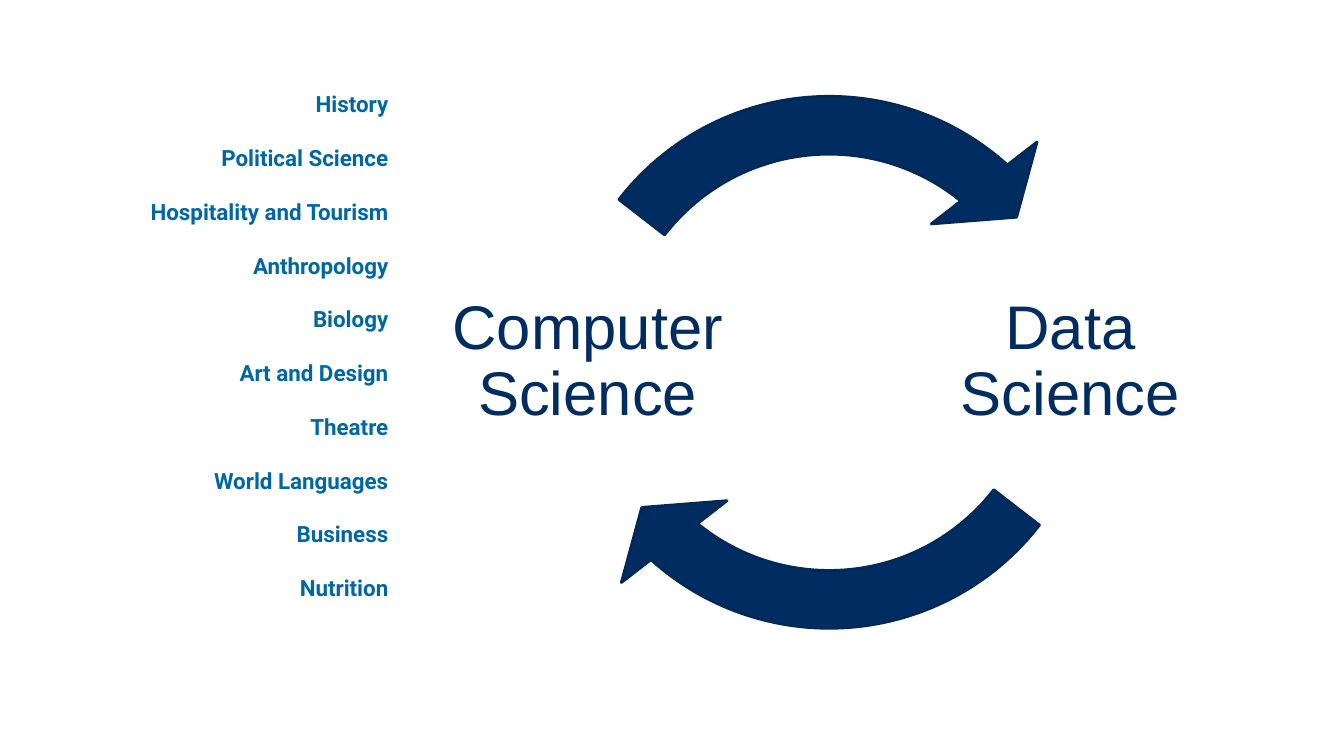
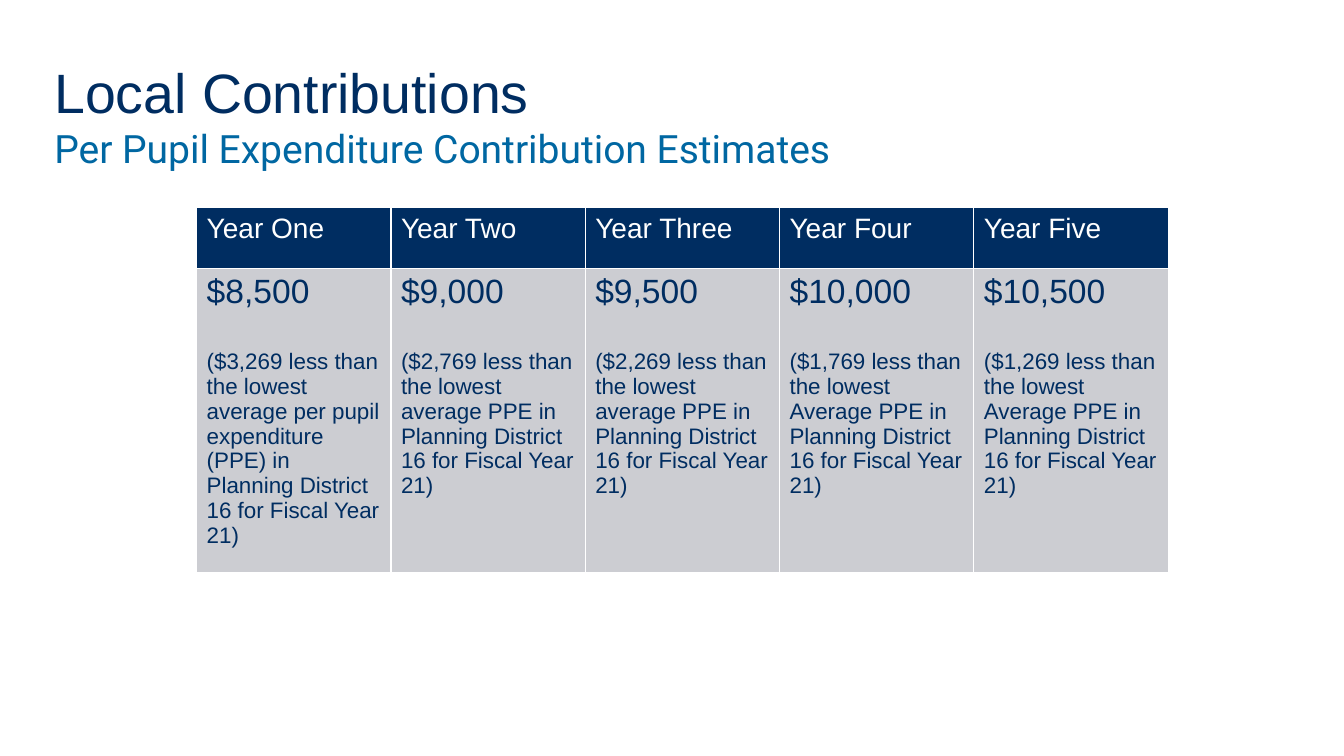
from dataclasses import dataclass
from typing import Any, NamedTuple

from lxml.etree import SubElement as Sub
from pptx import Presentation
from pptx.dml.color import RGBColor as Rgb
from pptx.enum.shapes import MSO_SHAPE as Kind
from pptx.enum.text import MSO_ANCHOR as Anchor, PP_ALIGN as Align
from pptx.oxml.ns import qn
from pptx.util import Inches, Pt

WIDE, HIGH = Inches(13.333), Inches(7.5)
INK = {"navy": "002D61", "edge": "002958", "blue": "0067A2",
       "gray": "CCCDD2", "white": "FFFFFF"}


class Box(NamedTuple):
    """Left, top, width and height in percent of the slide."""
    x: float
    y: float
    w: float
    h: float

    def emu(self) -> tuple[int, ...]:
        sides = (WIDE, HIGH, WIDE, HIGH)
        return tuple(round(side * part / 100) for side, part in zip(sides, self))


@dataclass(frozen=True)
class Style:
    size: float
    ink: str = "navy"
    name: str = "Arial"
    bold: bool = False


class Line(NamedTuple):
    text: str
    style: Style
    gap: float = 0


class Year(NamedTuple):
    head: str
    cost: str
    less: str
    base: str = "average PPE"


TITLE = Style(39.6)
SUB = Style(27.9, "blue", "Roboto")
FIELD = Style(16, "blue", "Roboto", True)
TOPIC = Style(44)
HEAD = Style(20, "white")
COST = Style(24)
NOTE = Style(16)

FIELDS = ("History", "Political Science", "Hospitality and Tourism",
          "Anthropology", "Biology", "Art and Design", "Theatre",
          "World Languages", "Business", "Nutrition")
YEARS = (
    Year("Year One", "$8,500", "$3,269", "average per pupil expenditure (PPE)"),
    Year("Year Two", "$9,000", "$2,769"),
    Year("Year Three", "$9,500", "$2,269"),
    Year("Year Four", "$10,000", "$1,769", "Average PPE"),
    Year("Year Five", "$10,500", "$1,269", "Average PPE"),
)


def tint(name: str) -> Rgb:
    return Rgb.from_string(INK[name])


def write(frame: Any, lines: list[Line], form: dict[str, Any]) -> None:
    """Fill a text frame; form holds the paragraph settings."""
    for i, line in enumerate(lines):
        para = frame.add_paragraph() if i else frame.paragraphs[0]
        for key, value in {**form, "space_before": Pt(line.gap)}.items():
            setattr(para, key, value)
        run = para.add_run()
        run.text = line.text
        style = line.style
        look = {"name": style.name, "size": Pt(style.size), "bold": style.bold}
        for key, value in look.items():
            setattr(run.font, key, value)
        run.font.color.rgb = tint(style.ink)


def label(slide: Any, box: Box, lines: list[Line],
          anchor: Any = Anchor.TOP, pad: float = 0.1, **form: Any) -> None:
    frame = slide.shapes.add_textbox(*box.emu()).text_frame
    look = {"word_wrap": True, "vertical_anchor": anchor,
            "margin_left": Inches(pad), "margin_right": Inches(pad)}
    for key, value in look.items():
        setattr(frame, key, value)
    write(frame, lines, form)


def arrow(slide: Any, box: Box, turn: float) -> None:
    """Draw a curved arrow, turned by an angle in degrees."""
    shape = slide.shapes.add_shape(Kind.CIRCULAR_ARROW, *box.emu())
    shape.shadow.inherit = False
    shift = turn * 0.6
    adjusts = (0.095, 6.85, 78.5 + shift, 22.65 + shift, 0.11)
    for i, value in enumerate(adjusts):
        shape.adjustments[i] = value
    shape.fill.solid()
    shape.fill.fore_color.rgb = tint("navy")
    shape.line.color.rgb = tint("edge")
    shape.line.width = Pt(2)


def paint(cell: Any, fill: str) -> None:
    """Give a cell white borders and a plain fill."""
    props = cell._tc.get_or_add_tcPr()
    for side in ("lnL", "lnR", "lnT", "lnB"):
        edge = Sub(props, qn(f"a:{side}"), w=str(Pt(1)))
        solid = Sub(edge, qn("a:solidFill"))
        Sub(solid, qn("a:srgbClr"), val=INK["white"])
    cell.fill.solid()
    cell.fill.fore_color.rgb = tint(fill)


def cycle(slide: Any) -> None:
    mid, reach = 61.7, 17.96
    wide = 21.98
    wheel = Box(mid - 22.61, 7.73, 45.22, 80.4)
    for text, side in (("Data Science", 1), ("Computer Science", -1)):
        box = Box(mid + side * reach - wide / 2, 28.4, wide, 39.07)
        label(slide, box, [Line(text, TOPIC)], Anchor.MIDDLE, 0.06,
              alignment=Align.CENTER, line_spacing=0.9)
    for turn in (0, 180):
        arrow(slide, wheel, turn)
    lines = [Line(text, FIELD, 19.2 if i else 0) for i, text in enumerate(FIELDS)]
    label(slide, Box(3.23, 11.33, 26.4, 73.2), lines, alignment=Align.RIGHT)


def costs(slide: Any) -> None:
    label(slide, Box(3.3, 6.8, 90, 16.67),
          [Line("Local Contributions", TITLE),
           Line("Per Pupil Expenditure Contribution Estimates", SUB)],
          Anchor.MIDDLE)
    rows = (8, 37.73)
    box = Box(14.63, 27.47, 72.3, sum(rows))
    table = slide.shapes.add_table(len(rows), len(YEARS), *box.emu()).table
    for row, part in zip(table.rows, rows):
        row.height = round(HIGH * part / 100)
    for col, year in enumerate(YEARS):
        note = (f"({year.less} less than the lowest {year.base} "
                "in Planning District 16 for Fiscal Year 21)")
        stack = (("navy", [Line(year.head, HEAD)]),
                 ("gray", [Line(year.cost, COST), Line(note, NOTE, 27.6)]))
        for row, (fill, lines) in enumerate(stack):
            cell = table.cell(row, col)
            paint(cell, fill)
            write(cell.text_frame, lines, {})


def main() -> None:
    deck = Presentation()
    deck.slide_width, deck.slide_height = WIDE, HIGH
    for draw in (cycle, costs):
        draw(deck.slides.add_slide(deck.slide_layouts[6]))
    deck.save("out.pptx")


if __name__ == "__main__":
    main()
